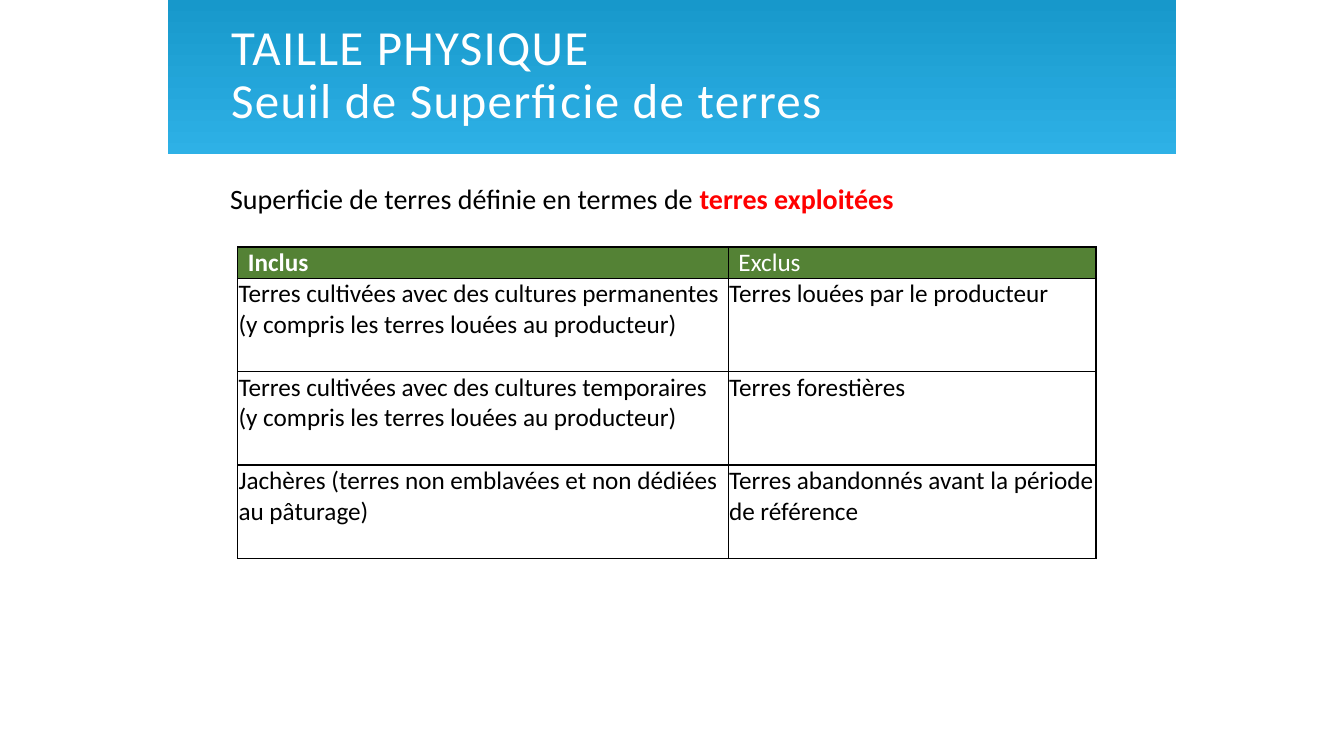
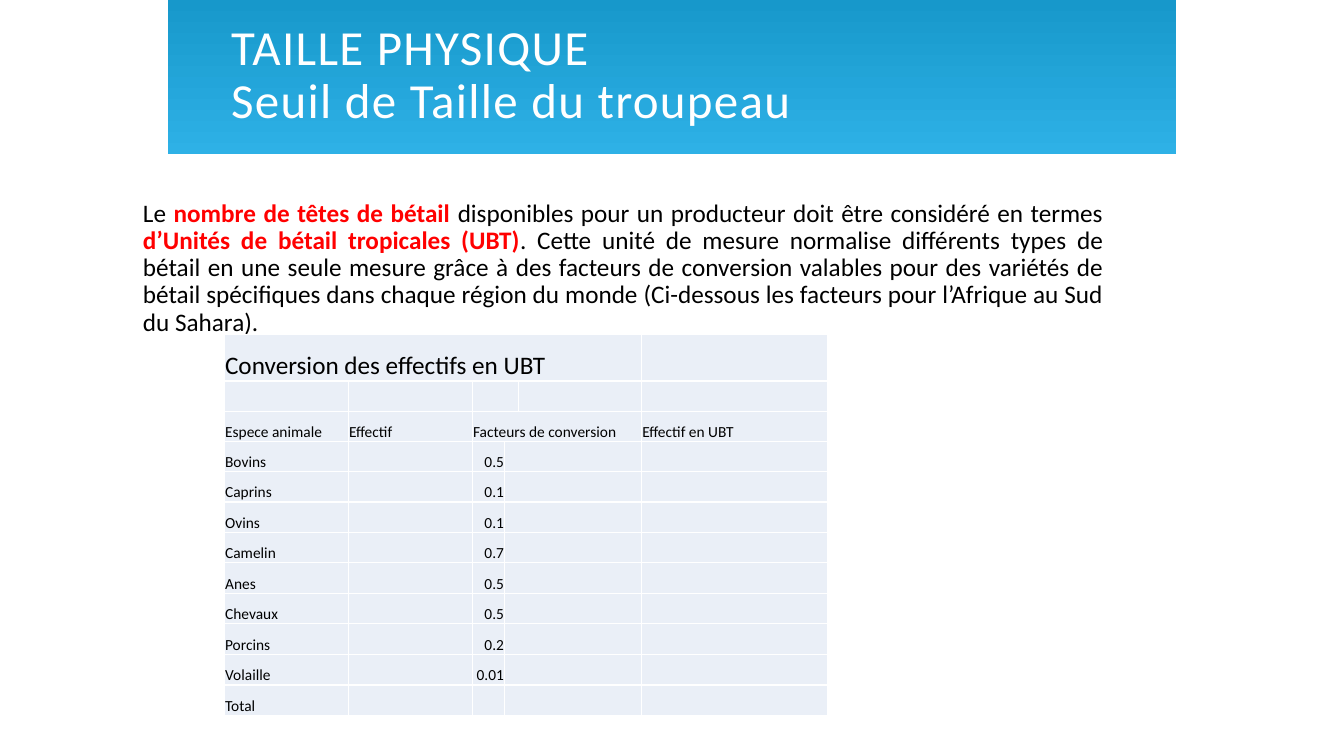
from dataclasses import dataclass, replace
from typing import Callable, NamedTuple, Optional

from lxml.etree import SubElement, fromstring
from pptx import Presentation
from pptx.dml.color import RGBColor as Rgb
from pptx.enum.shapes import MSO_SHAPE as Preset
from pptx.enum.text import MSO_ANCHOR as Anchor, MSO_AUTO_SIZE as AutoSize, PP_ALIGN as Align
from pptx.oxml.ns import nsdecls, qn
from pptx.slide import Slide
from pptx.table import _Cell as Cell
from pptx.util import Emu, Pt

EMU_PER_PX = 3048
TITLE_ONLY = 5


@dataclass(frozen=True)
class Theme:
    font: str = "Calibri"
    band_top: str = "1798CB"
    band_bottom: str = "2EB1E6"
    white: str = "FFFFFF"
    black: str = "000000"
    accent: str = "FF0000"
    header: str = "548235"
    pale: str = "EAEFF7"
    title_size: int = 35
    lead_size: int = 20
    body_size: int = 18
    small_size: int = 11
    title_spacing: str = "90"
    line_spacing: float = 0.9
    border: int = 1


THEME = Theme()


class Box(NamedTuple):
    left: int
    top: int
    width: int
    height: int

    def emu(self) -> list[Emu]:
        return [px(length) for length in self]


class Span(NamedTuple):
    text: str
    accent: bool = False


class Merge(NamedTuple):
    row: int
    first: int
    last: int


@dataclass(frozen=True)
class CellStyle:
    size: int = THEME.body_size
    color: str = THEME.black
    fill: Optional[str] = None
    bold: bool = False
    align: Align = Align.LEFT
    anchor: Anchor = Anchor.TOP
    indent: int = 2


@dataclass(frozen=True)
class TableSpec:
    left: int
    top: int
    columns: list[int]
    rows: list[int]
    texts: list[list[str]]
    border: str
    style_at: Callable[[int, int], CellStyle]
    merges: tuple[Merge, ...] = ()


BAND = Box(500, 0, 3000, 458)
TITLE = Box(655, 18, 2660, 420)


def px(length: int) -> Emu:
    return Emu(length * EMU_PER_PX)


def set_font(font, size: int, color: str, bold: bool = False) -> None:
    font.name = THEME.font
    font.size = Pt(size)
    font.bold = bold
    font.color.rgb = Rgb.from_string(color)


def add_titled_slide(deck, lines: list[str]) -> Slide:
    slide = deck.slides.add_slide(deck.slide_layouts[TITLE_ONLY])
    title = slide.shapes.title
    title.left, title.top, title.width, title.height = TITLE.emu()
    frame = title.text_frame
    frame.auto_size = AutoSize.NONE
    frame.vertical_anchor = Anchor.MIDDLE
    frame.margin_left = frame.margin_right = px(33)
    frame.margin_top = frame.margin_bottom = px(18)
    frame.text = "\n".join(lines)
    for para in frame.paragraphs:
        para.alignment = Align.LEFT
        para.line_spacing = THEME.line_spacing
        set_font(para.font, THEME.title_size, THEME.white)
        for run in para.runs:
            run.font._element.set("spc", THEME.title_spacing)

    band = slide.shapes.add_shape(Preset.RECTANGLE, *BAND.emu())
    band.shadow.inherit = False
    band.line.fill.background()
    band.fill.gradient()
    band.fill.gradient_angle = 270
    for stop, color in zip(band.fill.gradient_stops, (THEME.band_top, THEME.band_bottom)):
        stop.color.rgb = Rgb.from_string(color)
    title._element.addprevious(band._element)
    return slide


def add_body(slide: Slide, box: Box, spans: list[Span], size: int, align: Align) -> None:
    frame = slide.shapes.add_textbox(*box.emu()).text_frame
    frame.word_wrap = True
    para = frame.paragraphs[0]
    para.alignment = align
    para.line_spacing = THEME.line_spacing
    set_font(para.font, size, THEME.black)
    for span in spans:
        run = para.add_run()
        run.text = span.text
        if span.accent:
            run.font.bold = True
            run.font.color.rgb = Rgb.from_string(THEME.accent)


def set_borders(cell: Cell, color: str) -> None:
    properties = cell._tc.get_or_add_tcPr()
    for place, side in enumerate(("lnL", "lnR", "lnT", "lnB")):
        line = fromstring(f'<a:{side} {nsdecls("a")} w="{Pt(THEME.border)}"/>')
        fill = SubElement(line, qn("a:solidFill"))
        SubElement(fill, qn("a:srgbClr")).set("val", color)
        properties.insert(place, line)


def fill_cell(cell: Cell, text: str, style: CellStyle, border: str) -> None:
    cell.margin_left = px(style.indent)
    cell.margin_right = cell.margin_top = px(2)
    cell.margin_bottom = px(0)
    cell.vertical_anchor = style.anchor
    if style.fill:
        cell.fill.solid()
        cell.fill.fore_color.rgb = Rgb.from_string(style.fill)
    else:
        cell.fill.background()
    para = cell.text_frame.paragraphs[0]
    if text:
        para.text = text
    para.alignment = style.align
    set_font(para.font, style.size, style.color, style.bold)
    set_borders(cell, border)


def add_grid(slide: Slide, spec: TableSpec) -> None:
    box = Box(spec.left, spec.top, sum(spec.columns), sum(spec.rows))
    table = slide.shapes.add_table(len(spec.rows), len(spec.columns), *box.emu()).table
    table.first_row = table.horz_banding = False
    for column, width in zip(table.columns, spec.columns):
        column.width = px(width)
    for row, height in zip(table.rows, spec.rows):
        row.height = px(height)
    for row, texts in enumerate(spec.texts):
        for column, text in enumerate(texts):
            fill_cell(table.cell(row, column), text, spec.style_at(row, column), spec.border)
    for merge in spec.merges:
        table.cell(merge.row, merge.first).merge(table.cell(merge.row, merge.last))


def land_style(row: int, column: int) -> CellStyle:
    if row:
        return CellStyle()
    return CellStyle(color=THEME.white, fill=THEME.header, bold=column == 0,
                     anchor=Anchor.BOTTOM, indent=30)


def herd_style(row: int, column: int) -> CellStyle:
    style = CellStyle(fill=THEME.pale, size=THEME.small_size, anchor=Anchor.BOTTOM)
    if row == 0:
        return replace(style, size=THEME.body_size)
    if row > 2 and column == 2:
        return replace(style, align=Align.RIGHT)
    return style


def add_land_slide(deck) -> None:
    slide = add_titled_slide(deck, ["TAILLE PHYSIQUE", "Seuil de Superficie de terres"])
    add_body(slide, Box(655, 537, 2757, 1578), [
        Span("Superficie de terres définie en termes de "),
        Span("terres exploitées", True),
    ], THEME.lead_size, Align.LEFT)
    tenant = "(y compris les terres louées au producteur)"
    texts = [
        ["Inclus", "Exclus"],
        [f"Terres cultivées avec des cultures permanentes \n{tenant}",
         "Terres louées par le producteur"],
        [f"Terres cultivées avec des cultures temporaires \n{tenant}", "Terres forestières"],
        ["Jachères (terres non emblavées et non dédiées au pâturage)",
         "Terres abandonnés avant la période de référence"],
    ]
    add_grid(slide, TableSpec(708, 735, [1460, 1094], [93] + [278] * 3, texts,
                              THEME.black, land_style))


def add_herd_slide(deck) -> None:
    slide = add_titled_slide(deck, ["TAILLE PHYSIQUE", "Seuil de Taille du troupeau"])
    add_body(slide, Box(396, 582, 2918, 1578), [
        Span("Le "),
        Span("nombre de têtes de bétail ", True),
        Span("disponibles pour un producteur doit être considéré en termes "),
        Span("d’Unités de bétail tropicales (UBT)", True),
        Span(". Cette unité de mesure normalise différents types de bétail en une seule "
             "mesure grâce à des facteurs de conversion valables pour des variétés de bétail "
             "spécifiques dans chaque région du monde (Ci-dessous les facteurs pour "
             "l’Afrique au Sud du Sahara)."),
    ], THEME.body_size, Align.JUSTIFY)
    factors = {"Bovins": "0.5", "Caprins": "0.1", "Ovins": "0.1", "Camelin": "0.7",
               "Anes": "0.5", "Chevaux": "0.5", "Porcins": "0.2", "Volaille": "0.01",
               "Total": ""}
    texts = [
        ["Conversion des effectifs en UBT"] + [""] * 5,
        [""] * 6,
        ["Espece animale", "Effectif", "Facteurs de conversion", "", "", "Effectif en UBT"],
        *([animal, "", factor, "", "", ""] for animal, factor in factors.items()),
    ]
    merges = (Merge(0, 0, 4), Merge(1, 2, 3), Merge(2, 2, 4),
              *(Merge(row, 3, 4) for row in range(3, len(texts))))
    add_grid(slide, TableSpec(668, 996, [369, 369, 96, 42, 366, 552],
                              [138] + [90] * 5 + [91] * 6, texts,
                              THEME.white, herd_style, merges))


def main() -> None:
    deck = Presentation()
    deck.slide_width, deck.slide_height = px(4000), px(2250)
    add_land_slide(deck)
    add_herd_slide(deck)
    deck.save("out.pptx")


if __name__ == "__main__":
    main()
